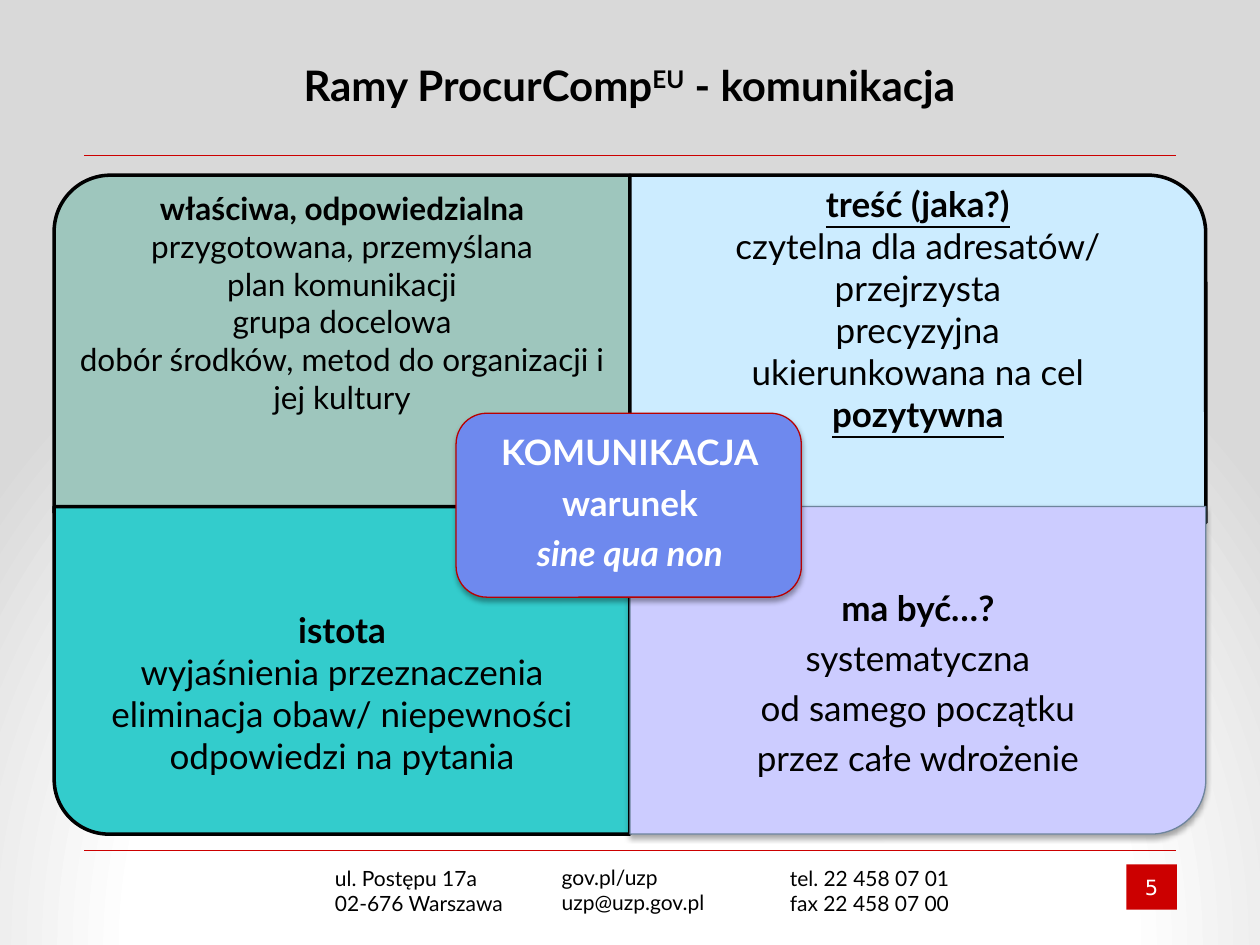
from lxml.etree import SubElement
from pptx import Presentation
from pptx.dml.color import RGBColor
from pptx.enum.shapes import MSO_CONNECTOR, MSO_SHAPE
from pptx.enum.text import MSO_ANCHOR, PP_ALIGN
from pptx.oxml import parse_xml
from pptx.oxml.ns import nsdecls, qn
from pptx.util import Inches, Pt

COLORS = {
    "black": "000000", "white": "FFFFFF", "grey": "D9D9D9", "red": "CC0000",
    "sage": "9EC6BD", "sky": "CCECFF", "teal": "33CCCC", "lilac": "CCCCFF",
    "slate": "6E859D", "blue": "6E89EE", "dark_red": "B90000",
}
BOLD = {"bold": True}
UNDERLINED = {"bold": True, "underline": True}
SPACED = {"line_spacing": 0.9, "space_after": Pt(7)}


def add_block(shape_kind, frame, fill, line, width, rotation=0, shadow=False):
    """Add a filled shape; frame is the area it covers after rotation."""
    left, top, wide, high = frame
    if rotation in (90, 270):
        left, top = left + (wide - high) / 2, top + (high - wide) / 2
        wide, high = high, wide
    block = slide.shapes.add_shape(shape_kind, *map(Inches, (left, top, wide, high)))
    block.rotation = rotation
    block.fill.solid()
    block.fill.fore_color.rgb = RGBColor.from_string(COLORS[fill])
    block.line.color.rgb = RGBColor.from_string(COLORS[line])
    block.line.width = Pt(width)
    block.shadow.inherit = False
    if shadow:
        effects = block._element.spPr.find(qn("a:effectLst"))
        effects.append(parse_xml(
            f'<a:outerShdw {nsdecls("a")} blurRad="{Pt(3.1)}" dist="{Pt(1.8)}" '
            'dir="5400000" rotWithShape="0"><a:srgbClr val="000000">'
            '<a:alpha val="35000"/></a:srgbClr></a:outerShdw>'))
    return block


def add_text(frame, lines, size, color="black", align=PP_ALIGN.CENTER,
             anchor=MSO_ANCHOR.TOP, margins=(0.16, 0), spacing=None):
    """Add a text box; lines holds pairs of text and font values."""
    box = slide.shapes.add_textbox(*map(Inches, frame))
    text = box.text_frame
    text.word_wrap = True
    text.vertical_anchor = anchor
    text.margin_left = text.margin_right = Inches(margins[0])
    text.margin_top = text.margin_bottom = Inches(margins[1])
    for index, (line, font_values) in enumerate(lines):
        para = text.paragraphs[0] if index == 0 else text.add_paragraph()
        para.alignment = align
        for name, value in (spacing or {}).items():
            setattr(para, name, value)
        span = para.add_run()
        span.text = line
        span.font.color.rgb = RGBColor.from_string(COLORS[color])
        for name, value in {"name": "Lato", "size": Pt(size), **font_values}.items():
            setattr(span.font, name, value)


deck = Presentation()
deck.slide_width, deck.slide_height = Inches(10), Inches(7.5)
slide = deck.slides.add_slide(deck.slide_layouts[5])

# Background gradient
stops = "".join(
    f'<a:gs pos="{position * 1000}"><a:srgbClr val="{COLORS[color]}"/></a:gs>'
    for position, color in ((0, "white"), (63, "white"), (100, "grey")))
slide.element.cSld.insert(0, parse_xml(
    f'<p:bg {nsdecls("p", "a")}><p:bgPr><a:gradFill rotWithShape="1">'
    f'<a:gsLst>{stops}</a:gsLst><a:path path="circle">'
    '<a:fillToRect l="50000" t="130000" r="50000" b="-30000"/></a:path>'
    '</a:gradFill><a:effectLst/></p:bgPr></p:bg>'))

# Title
title = slide.shapes.title
title.left, title.top, title.width, title.height = map(Inches, (0.62, 0.13, 8.75, 1.08))
title.text_frame.vertical_anchor = MSO_ANCHOR.MIDDLE
para = title.text_frame.paragraphs[0]
para.alignment = PP_ALIGN.CENTER
for words, baseline in (("Ramy ProcurComp", 0), ("EU", 30), (" - komunikacja", 0)):
    span = para.add_run()
    span.text = words
    span.font.color.rgb = RGBColor.from_string(COLORS["black"])
    for name, value in {"name": "Lato", "size": Pt(24), "bold": True}.items():
        setattr(span.font, name, value)
    if baseline:
        span._r.get_or_add_rPr().set("baseline", str(baseline * 1000))

# Rules and footer
for y in (6.75, 1.23):
    rule = slide.shapes.add_connector(
        MSO_CONNECTOR.STRAIGHT, Inches(0.67), Inches(y), Inches(9.33), Inches(y))
    rule.line.color.rgb = RGBColor.from_string(COLORS["red"])
    rule.line.width = Pt(0.25)
    SubElement(rule._element.spPr, qn("a:effectLst"))

number = add_block(MSO_SHAPE.RECTANGLE, (8.94, 6.86, 0.4, 0.36), "red", "red", 0.25)
number.line.fill.background()
add_text((8.94, 6.86, 0.4, 0.36), [("5", {"name": "DejaVu Sans"})], 12, "white",
         anchor=MSO_ANCHOR.MIDDLE, margins=(0, 0))

contacts = [
    (2.56, 6.82, ("ul. Postępu 17a", "02-676 Warszawa")),
    (4.36, 6.81, ("gov.pl/uzp", "uzp@uzp.gov.pl")),
    (6.17, 6.82, ("tel. 22 458 07 01", "fax 22 458 07 00")),
]
for left, top, lines in contacts:
    add_text((left, top, 1.65, 0.5), [(line, {}) for line in lines], 12,
             align=PP_ALIGN.LEFT, margins=(0.1, 0.05))

# Quadrants: left, top, height, fill, line, line width, rotation, shadow,
# text top, text size, paragraph spacing, lines
LEFT, MIDDLE, WIDTH = 0.43, 5, 4.57
quadrants = [
    (LEFT, 1.39, 2.68, "sage", "black", 2, 270, False, 1.5, 18, None, [
        ("właściwa, odpowiedzialna", BOLD),
        ("przygotowana, przemyślana", {}),
        ("plan komunikacji", {}),
        ("grupa docelowa", {}),
        ("dobór środków, metod do organizacji i jej kultury", {})]),
    (MIDDLE, 1.39, 2.76, "sky", "black", 2, 0, False, 1.45, 20, None, [
        ("treść (jaka?)", UNDERLINED),
        ("czytelna dla adresatów/ przejrzysta", {}),
        ("precyzyjna", {}),
        ("ukierunkowana na cel", {}),
        ("pozytywna", UNDERLINED)]),
    (LEFT, 4.02, 2.6, "teal", "black", 2, 180, False, 4.83, 20, None, [
        ("istota", BOLD),
        ("wyjaśnienia przeznaczenia", {}),
        ("eliminacja obaw/ niepewności", {}),
        ("odpowiedzi na pytania", {})]),
    (MIDDLE, 4.02, 2.6, "lilac", "slate", 0.75, 90, True, 4.69, 20, SPACED, [
        ("ma być…?", BOLD),
        ("systematyczna", {}),
        ("od samego początku", {}),
        ("przez całe wdrożenie", {})]),
]
for (left, top, height, fill, line, width, rotation, shadow,
     text_top, size, spacing, lines) in quadrants:
    add_block(MSO_SHAPE.ROUND_1_RECTANGLE, (left, top, WIDTH, height),
              fill, line, width, rotation, shadow)
    add_text((left, text_top, WIDTH, 1.8), lines, size, spacing=spacing)

# Centre
add_block(MSO_SHAPE.ROUNDED_RECTANGLE, (3.62, 3.28, 2.74, 1.46),
          "blue", "dark_red", 0.75, shadow=True)
add_text((3.7, 3.35, 2.6, 1.31),
         [("KOMUNIKACJA", BOLD), ("warunek", BOLD),
          ("sine qua non", {"bold": True, "italic": True})],
         20, "white", anchor=MSO_ANCHOR.MIDDLE, margins=(0.08, 0.08), spacing=SPACED)

deck.save("out.pptx")
